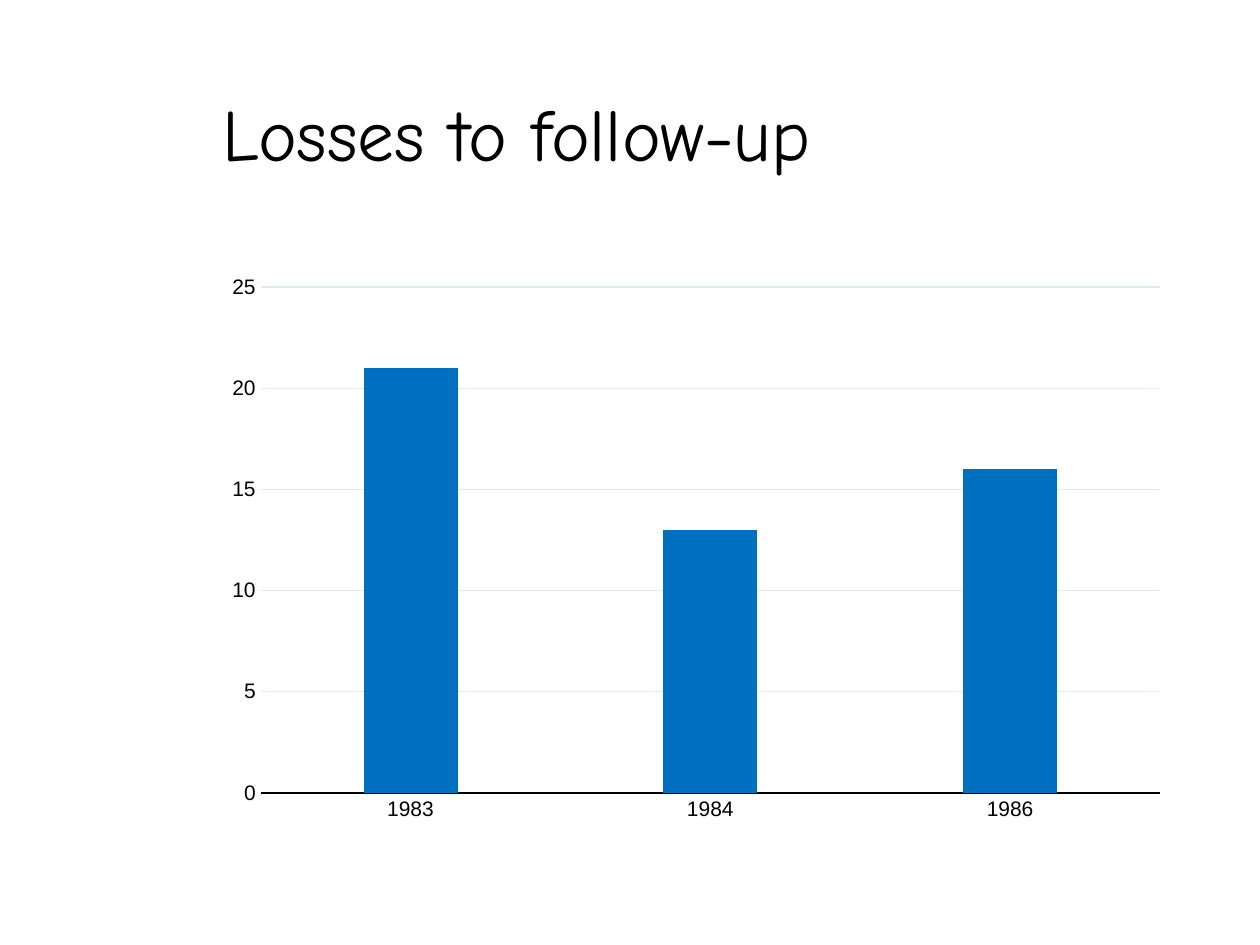
from pptx import Presentation, util as u
from pptx.chart.data import CategoryChartData
from pptx.dml.color import RGBColor
from pptx.enum import chart as ch, text as tx

TITLE = "Losses to follow-up"
YEARS = ["1983", "1984", "1986"]
LOSSES = ("Series 1", [21, 13, 16])
COLORS = {"text": "000000", "bar": "0070C0", "grid": "DBEDED", "base": "336666"}
TITLE_BOX = (1.67, 0.21, 7.67, 1.67)
CHART_BOX = (1.69, 2.1, 7.67, 4.5)
FONTS = {
    "title": {"name": "Comic Neue", "size": u.Pt(42)},
    "chart": {"name": "Arial", "size": u.Pt(10)},
    "axis": {"name": "Arial", "size": u.Pt(12)},
}


def color(key):
    return RGBColor.from_string(COLORS[key])


def assign(item, values):
    for key, value in values.items():
        setattr(item, key, value)


def style(font, kind, tint):
    assign(font, FONTS[kind])
    font.color.rgb = color(tint)


def rule(line, tint):
    line.width = u.Pt(0.75)
    line.color.rgb = color(tint)


def add_title(slide):
    frame = slide.shapes.add_textbox(*map(u.Inches, TITLE_BOX)).text_frame
    assign(frame, {"word_wrap": True, "vertical_anchor": tx.MSO_ANCHOR.MIDDLE})
    run = frame.paragraphs[0].add_run()
    run.text = TITLE
    style(run.font, "title", "text")


def add_bars(slide):
    data = CategoryChartData()
    data.categories = YEARS
    data.add_series(*LOSSES)
    chart = slide.shapes.add_chart(
        ch.XL_CHART_TYPE.COLUMN_CLUSTERED, *map(u.Inches, CHART_BOX), data
    ).chart
    assign(chart, {"has_legend": False, "has_title": False})
    style(chart.font, "chart", "base")

    plot = chart.plots[0]
    assign(plot, {"gap_width": 219, "overlap": -27, "vary_by_categories": False})
    fill = plot.series[0].format.fill
    fill.solid()
    fill.fore_color.rgb = color("bar")

    years, counts = chart.category_axis, chart.value_axis
    for axis in (years, counts):
        assign(axis, {"major_tick_mark": ch.XL_TICK_MARK.NONE,
                      "minor_tick_mark": ch.XL_TICK_MARK.NONE})
        style(axis.tick_labels.font, "axis", "text")
    rule(years.format.line, "text")
    assign(counts, {"minimum_scale": 0, "maximum_scale": 25, "major_unit": 5,
                    "has_major_gridlines": True})
    counts.format.line.fill.background()
    rule(counts.major_gridlines.format.line, "grid")


def main():
    deck = Presentation()
    assign(deck, {"slide_width": u.Inches(10), "slide_height": u.Inches(7.5)})
    slide = deck.slides.add_slide(deck.slide_layouts[6])
    add_title(slide)
    add_bars(slide)
    deck.save("out.pptx")


if __name__ == "__main__":
    main()
